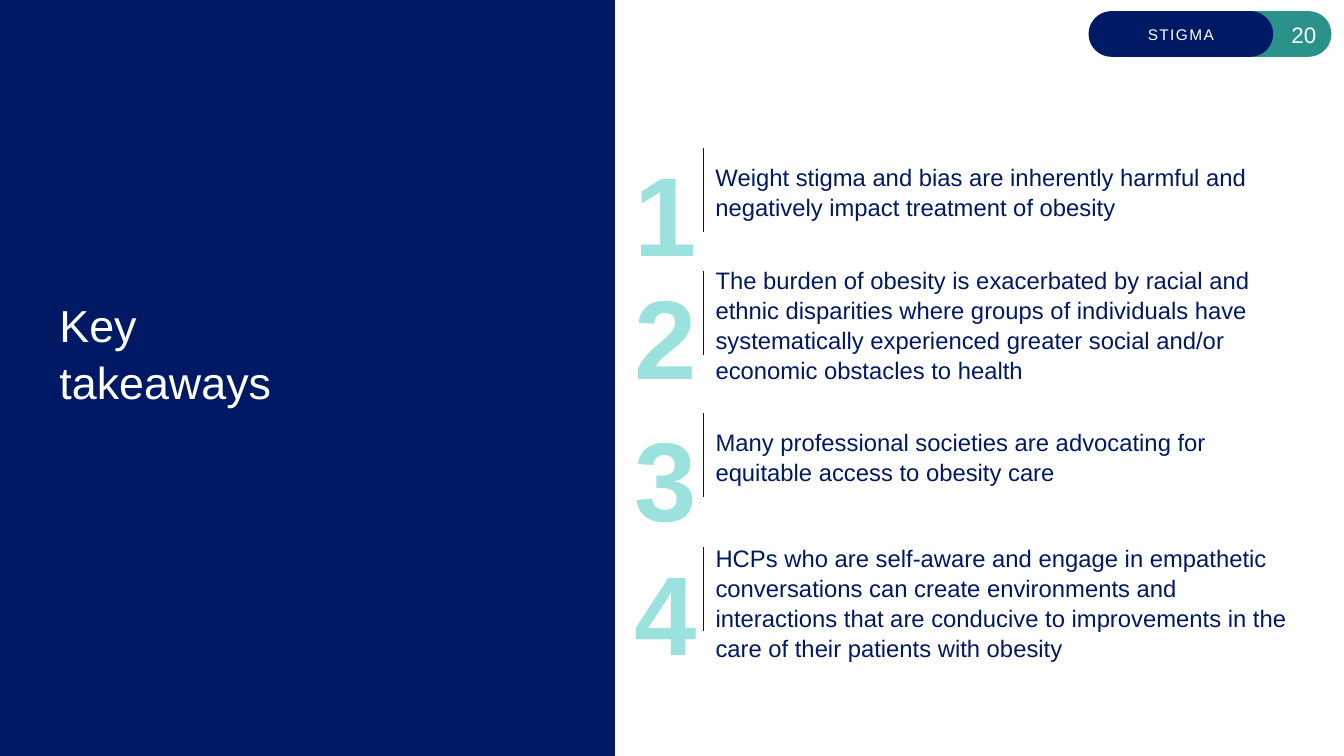
from pptx import Presentation
from pptx.dml.color import RGBColor
from pptx.enum.shapes import MSO_CONNECTOR, MSO_SHAPE
from pptx.enum.text import MSO_ANCHOR, PP_ALIGN
from pptx.oxml.ns import qn
from pptx.util import Pt
from lxml import etree

RECTANGLE, PILL = MSO_SHAPE.RECTANGLE, MSO_SHAPE.ROUNDED_RECTANGLE
STRAIGHT = MSO_CONNECTOR.STRAIGHT
TOP, MIDDLE = MSO_ANCHOR.TOP, MSO_ANCHOR.MIDDLE
LEFT, CENTER, RIGHT = PP_ALIGN.LEFT, PP_ALIGN.CENTER, PP_ALIGN.RIGHT

TITLE = "Key\vtakeaways"
SECTION = "STIGMA"
PAGE_NUMBER = "20"
TAKEAWAYS = [
    {"rule_top": 105.8, "text_top": 111.6, "width": 452,
     "text": "Weight stigma and bias are inherently harmful and negatively impact "
             "treatment of obesity"},
    {"rule_top": 193.5, "text_top": 185, "width": 434,
     "text": "The burden of obesity is exacerbated by racial and ethnic disparities "
             "where groups of individuals have systematically experienced greater "
             "social and/or economic obstacles to health"},
    {"rule_top": 295.2, "text_top": 301, "width": 400,
     "text": "Many professional societies are advocating for equitable access to "
             "obesity care"},
    {"rule_top": 390.8, "text_top": 383.8, "width": 425,
     "text": "HCPs who are self-aware and engage in empathetic conversations can "
             "create environments and interactions that are conducive to "
             "improvements in the care of their patients with obesity"},
]

THEME = {
    "font": "Arial",
    "navy": RGBColor(0x00, 0x19, 0x65),
    "teal": RGBColor(0x2A, 0x91, 0x8B),
    "mint": RGBColor(0x9B, 0xE2, 0xDE),
    "white": RGBColor(0xFF, 0xFF, 0xFF),
    "title_size": 32,
    "number_size": 80,
    "body_size": 17,
    "page_size": 16,
    "section_size": 11,
}

SLIDE_WIDTH, SLIDE_HEIGHT = 960, 540
PANEL_WIDTH = 439.2
PILL_TOP, PILL_WIDTH, PILL_HEIGHT = 8, 131.8, 32.6
SECTION_LEFT, PAGE_LEFT = 777.6, 819.2
NUMBER_LEFT, NUMBER_WIDTH, NUMBER_HEIGHT = 452.9, 44.6, 105.8
NUMBER_RISE = 27.4
RULE_LEFT, RULE_HEIGHT = 502.5, 60
TEXT_LEFT = 504
INSETS = (6, 3)
TEXT_INSETS = (7.2, 3.6)


def write(shape, text, size, color, align=LEFT, anchor=TOP, insets=(0, 0),
          spacing=1.05, bold=False, wrap=True):
    frame = shape.text_frame
    frame.word_wrap = wrap
    frame.vertical_anchor = anchor
    frame.margin_left = frame.margin_right = Pt(insets[0])
    frame.margin_top = frame.margin_bottom = Pt(insets[1])
    frame.text = text
    paragraph = frame.paragraphs[0]
    paragraph.alignment = align
    paragraph.line_spacing = spacing
    paragraph.font.name = THEME["font"]
    paragraph.font.size = Pt(THEME[size])
    paragraph.font.bold = bold
    paragraph.font.color.rgb = THEME[color]
    return paragraph


def add_block(slide, kind, left, top, width, height, color):
    shape = slide.shapes.add_shape(kind, Pt(left), Pt(top), Pt(width), Pt(height))
    shape.shadow.inherit = False
    shape.fill.solid()
    shape.fill.fore_color.rgb = THEME[color]
    shape.line.fill.background()
    return shape


def add_pill(slide, left, color, text, size, align):
    pill = add_block(slide, PILL, left, PILL_TOP, PILL_WIDTH, PILL_HEIGHT, color)
    pill.adjustments[0] = 0.5
    return write(pill, text, size, "white", align, MIDDLE, INSETS)


def add_text(slide, left, top, width, height, *content, **style):
    box = slide.shapes.add_textbox(Pt(left), Pt(top), Pt(width), Pt(height))
    write(box, *content, **style)


def add_rule(slide, top):
    rule = slide.shapes.add_connector(
        STRAIGHT, Pt(RULE_LEFT), Pt(top), Pt(RULE_LEFT), Pt(top + RULE_HEIGHT))
    rule.line.color.rgb = THEME["navy"]
    rule.line.width = Pt(1)
    etree.SubElement(rule._element.spPr, qn("a:effectLst"))


def add_takeaway(slide, number, takeaway):
    rule_top, text_top = takeaway["rule_top"], takeaway["text_top"]
    text_height = 2 * (rule_top + RULE_HEIGHT / 2 - text_top)
    add_text(slide, NUMBER_LEFT, rule_top - NUMBER_RISE, NUMBER_WIDTH, NUMBER_HEIGHT,
             str(number), "number_size", "mint", spacing=1.26, bold=True, wrap=False)
    add_text(slide, TEXT_LEFT, text_top, takeaway["width"], text_height,
             takeaway["text"], "body_size", "navy", insets=TEXT_INSETS)
    add_rule(slide, rule_top)


def main():
    presentation = Presentation()
    presentation.slide_width = Pt(SLIDE_WIDTH)
    presentation.slide_height = Pt(SLIDE_HEIGHT)
    slide = presentation.slides.add_slide(presentation.slide_layouts[6])

    add_block(slide, RECTANGLE, 0, 0, PANEL_WIDTH, SLIDE_HEIGHT, "navy")
    add_pill(slide, PAGE_LEFT, "teal", PAGE_NUMBER, "page_size", RIGHT)
    section = add_pill(slide, SECTION_LEFT, "navy", SECTION, "section_size", CENTER)
    section.runs[0]._r.get_or_add_rPr().set("spc", "100")
    add_text(slide, 42.5, 32.4, 364.3, 437.8, TITLE, "title_size", "white",
             anchor=MIDDLE)
    for number, takeaway in enumerate(TAKEAWAYS, start=1):
        add_takeaway(slide, number, takeaway)

    presentation.save("out.pptx")


if __name__ == "__main__":
    main()
